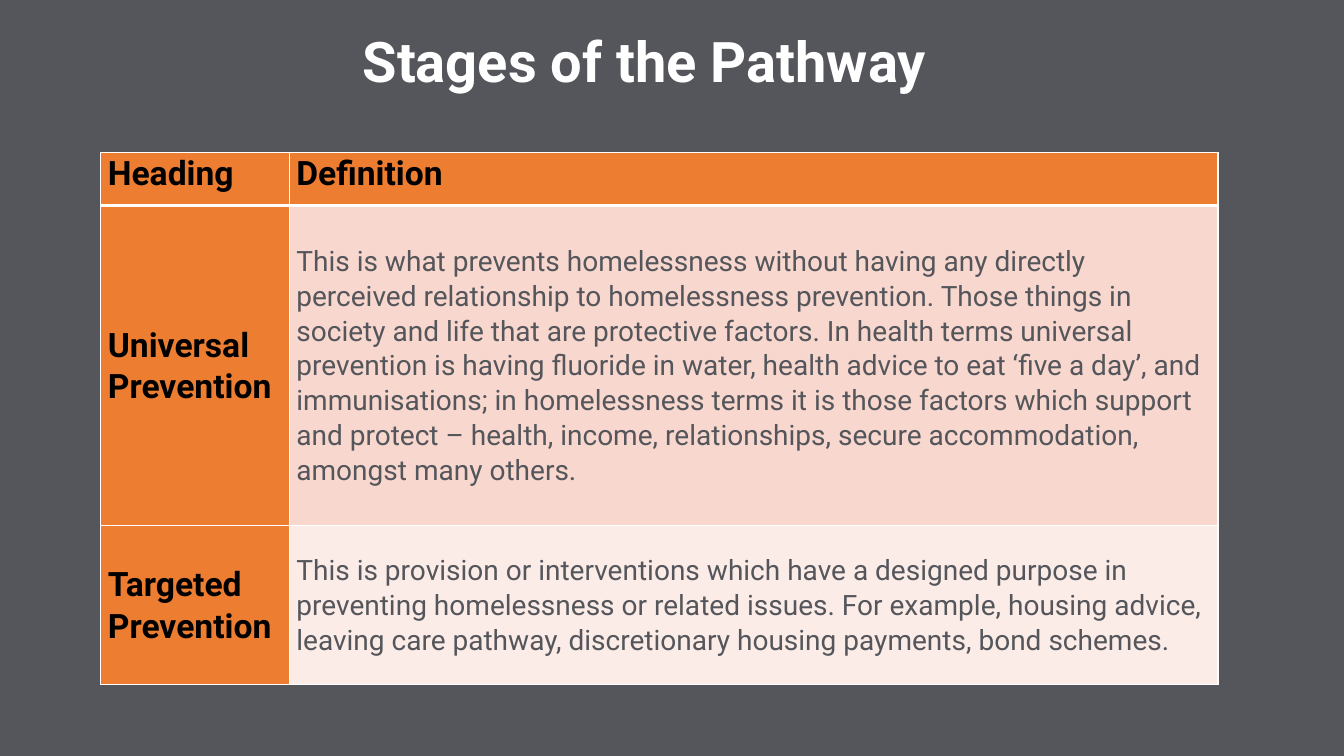
from lxml import etree
from pptx import Presentation
from pptx.dml.color import RGBColor
from pptx.enum.text import MSO_ANCHOR, PP_ALIGN
from pptx.oxml.ns import qn
from pptx.util import Inches, Pt

TOP, MIDDLE, BOTTOM = MSO_ANCHOR.TOP, MSO_ANCHOR.MIDDLE, MSO_ANCHOR.BOTTOM
CENTER, LEFT = PP_ALIGN.CENTER, PP_ALIGN.LEFT
GREY = RGBColor(0x54, 0x56, 0x5B)
WHITE = RGBColor(0xFF, 0xFF, 0xFF)
BLACK = RGBColor(0, 0, 0)
ORANGE = RGBColor(0xED, 0x7D, 0x31)
PINK = RGBColor(0xF8, 0xD7, 0xCE)
PALE = RGBColor(0xFC, 0xEC, 0xE8)

TITLE = {"size": Pt(40), "bold": True, "color": WHITE}
HEADING = {"size": Pt(24), "bold": True, "color": BLACK}
BODY = {"size": Pt(20), "bold": False, "color": GREY}

COLS = (1.87, 9.21)
ROWS = (0.53, 3.17, 1.58)
BANDS = (ORANGE, PINK, PALE)
STAGES = (
    ("Heading", "Definition"),
    ("Universal Prevention",
     "This is what prevents homelessness without having any directly perceived "
     "relationship to homelessness prevention. Those things in society and life "
     "that are protective factors. In health terms universal prevention is having "
     "fluoride in water, health advice to eat ‘five a day’, and immunisations; in "
     "homelessness terms it is those factors which support and protect – health, "
     "income, relationships, secure accommodation, amongst many others."),
    ("Targeted Prevention",
     "This is provision or interventions which have a designed purpose in "
     "preventing homelessness or related issues. For example, housing advice, "
     "leaving care pathway, discretionary housing payments, bond schemes."),
)


def write(tf, text, style, align, spacing):
    """Fill a text frame with one styled paragraph."""
    tf.word_wrap = True
    p = tf.paragraphs[0]
    p.alignment, p.line_spacing = align, spacing
    r = p.add_run()
    r.text = text
    r.font.name = "Roboto"
    for name, value in style.items():
        if name == "color":
            r.font.color.rgb = value
        else:
            setattr(r.font, name, value)


def add_borders(cell, widths):
    """Draw white cell borders, given widths in points by side."""
    tcPr = cell._tc.get_or_add_tcPr()
    for i, (side, width) in enumerate(widths.items()):
        ln = etree.Element(qn(f"a:ln{side}"), w=str(Pt(width)))
        fill = etree.SubElement(ln, qn("a:solidFill"))
        etree.SubElement(fill, qn("a:srgbClr"), val=str(WHITE))
        tcPr.insert(i, ln)


def add_title(s, x, y, w, h):
    """Place the slide title in its box."""
    tf = s.shapes.add_textbox(*map(Inches, (x, y, w, h))).text_frame
    tf.vertical_anchor = BOTTOM
    write(tf, "Stages of the Pathway", TITLE, CENTER, 0.9)


def add_stages(s, x, y, w, h):
    """Place the table of stages, sharing the box out by COLS and ROWS."""
    box = map(Inches, (x, y, w, h))
    table = s.shapes.add_table(len(ROWS), len(COLS), *box).table
    for col, share in zip(table.columns, COLS):
        col.width = Inches(w * share / sum(COLS))
    for row, share in zip(table.rows, ROWS):
        row.height = Inches(h * share / sum(ROWS))
    for i, texts in enumerate(STAGES):
        for j, text in enumerate(texts):
            cell = table.cell(i, j)
            is_heading = i == 0 or j == 0
            cell.fill.solid()
            cell.fill.fore_color.rgb = ORANGE if is_heading else BANDS[i]
            cell.vertical_anchor = TOP if i == 0 else MIDDLE
            cell.margin_left = cell.margin_right = Inches(0.07)
            cell.margin_top = cell.margin_bottom = 0
            write(cell.text_frame, text, HEADING if is_heading else BODY, LEFT, 1.06)
            add_borders(cell, {"L": 1, "R": 1, "T": 3 if i == 1 else 1,
                               "B": 3 if i == 0 else 1})


def main():
    """Build the slide and save it."""
    prs = Presentation()
    prs.slide_width, prs.slide_height = Inches(13.33), Inches(7.5)
    s = prs.slides.add_slide(prs.slide_layouts[6])
    s.background.fill.solid()
    s.background.fill.fore_color.rgb = GREY
    add_title(s, 1.54, 0.07, 9.7, 0.92)
    add_stages(s, 1, 1.51, 11.08, 5.28)
    prs.save("out.pptx")


if __name__ == "__main__":
    main()
